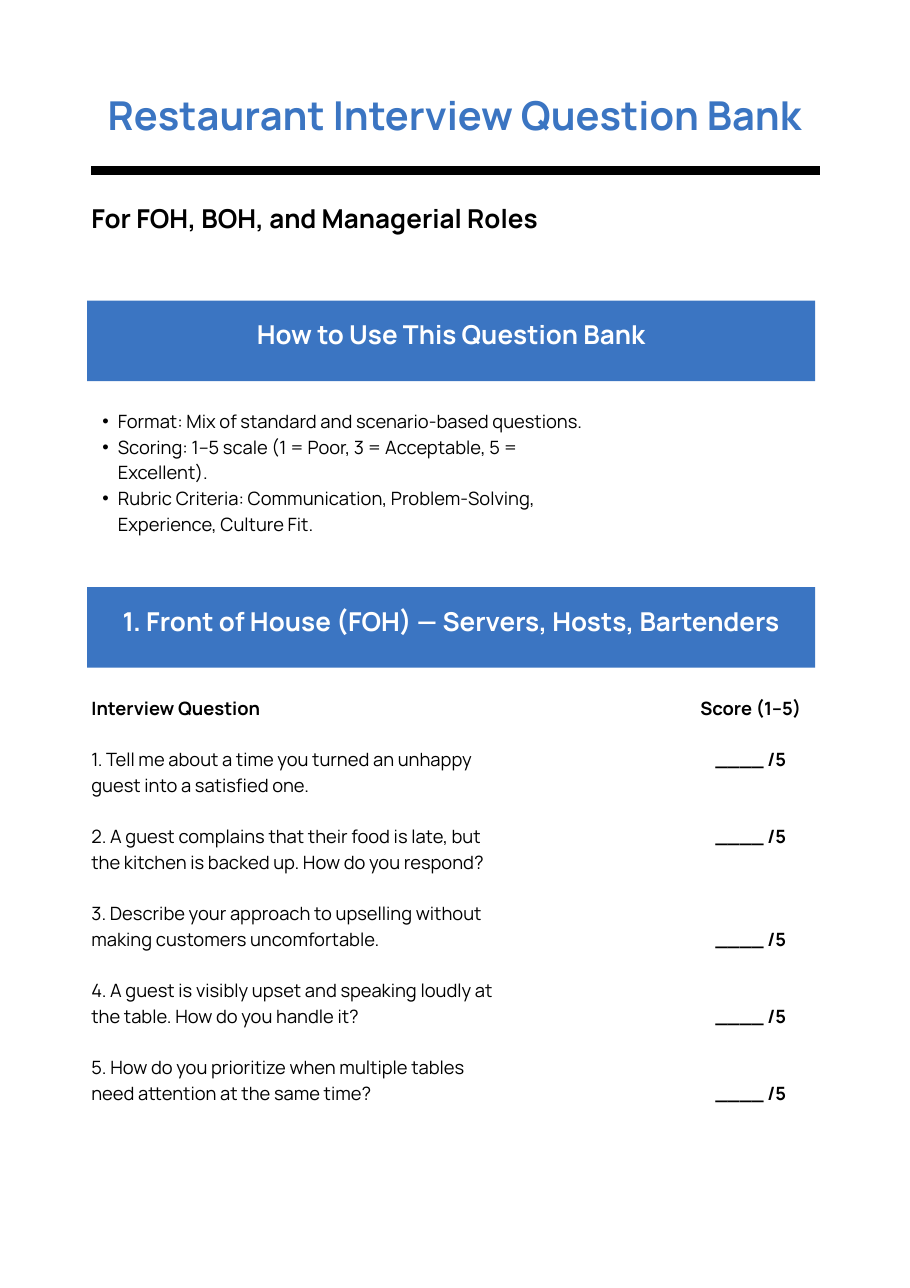
"""Build the restaurant interview question bank page."""
from lxml import etree
from pptx import Presentation
from pptx.dml.color import RGBColor
from pptx.enum.shapes import MSO_CONNECTOR, MSO_SHAPE
from pptx.enum.text import MSO_ANCHOR, MSO_AUTO_SIZE, PP_ALIGN
from pptx.oxml.ns import qn
from pptx.util import Emu, Pt

PX = 9144
FONT = "Manrope"
BLUE, BLACK, WHITE = "3B75C2", "000000", "FFFFFF"
LEADING = 1.4
LINE = 16.8


def color(value):
    return RGBColor.from_string(value)


def write(shape, lines, size, ink, bold=False, align=PP_ALIGN.LEFT, margins=(0, 0, 0, 0)):
    frame = shape.text_frame
    frame.word_wrap = True
    frame.margin_left, frame.margin_top, frame.margin_right, frame.margin_bottom = [
        Emu(margin * PX) for margin in margins
    ]
    frame.text = "\n".join(lines)
    for para in frame.paragraphs:
        para.alignment = align
        para.line_spacing = Pt(size * LEADING)
        for span in para.runs:
            span.font.name = FONT
            span.font.size = Pt(size)
            span.font.bold = bold
            span.font.color.rgb = color(ink)
    return frame


deck = Presentation()
deck.slide_width, deck.slide_height = Emu(826 * PX), Emu(1169 * PX)
page = deck.slides.add_slide(deck.slide_layouts[6])

rule = page.shapes.add_connector(
    MSO_CONNECTOR.STRAIGHT, Emu(83 * PX), Emu(155 * PX), Emu(744 * PX), Emu(155 * PX)
)
rule.line.color.rgb = color(BLACK)
rule.line.width = Pt(6)
etree.SubElement(rule.element.spPr, qn("a:effectLst"))

for top, heading in [
    (273, "How to Use This Question Bank"),
    (533, "1. Front of House (FOH) — Servers, Hosts, Bartenders"),
]:
    band = page.shapes.add_shape(
        MSO_SHAPE.RECTANGLE, Emu(79 * PX), Emu(top * PX), Emu(661 * PX), Emu(73 * PX)
    )
    band.shadow.inherit = False
    band.fill.solid()
    band.fill.fore_color.rgb = color(BLUE)
    band.line.fill.background()
    frame = write(band, [heading], 17, WHITE, True, PP_ALIGN.CENTER, (6, 6, 6, 23))
    frame.vertical_anchor = MSO_ANCHOR.MIDDLE

instructions = [
    "Format: Mix of standard and scenario-based questions.",
    "Scoring: 1–5 scale (1 = Poor, 3 = Acceptable, 5 = Excellent).",
    "Rubric Criteria: Communication, Problem-Solving, Experience, Culture Fit.",
]
questions = [
    "Interview Question",
    "1. Tell me about a time you turned an unhappy guest into a satisfied one.",
    "2. A guest complains that their food is late, but the kitchen is backed up. How do you respond?",
    "3. Describe your approach to upselling without making customers uncomfortable.",
    "4. A guest is visibly upset and speaking loudly at the table. How do you handle it?",
    "5. How do you prioritize when multiple tables need attention at the same time?",
]
scores = ["Score (1–5)"] + ["____ /5"] * 5

frames = []
for left, top, width, height, lines, size, ink, bold, align in [
    (79, 75, 668, 50, ["Restaurant Interview Question Bank"], 26, BLUE, True, PP_ALIGN.CENTER),
    (83, 179, 464, 34, ["For FOH, BOH, and Managerial Roles"], 17, BLACK, True, PP_ALIGN.LEFT),
    (79, 369, 464, 137, instructions, 12, BLACK, False, PP_ALIGN.LEFT),
    (83, 629, 377, 412, questions, 12, BLACK, False, PP_ALIGN.LEFT),
    (623, 629, 117, 405, scores, 12, BLACK, True, PP_ALIGN.CENTER),
]:
    box = page.shapes.add_textbox(Emu(left * PX), Emu(top * PX), Emu(width * PX), Emu(height * PX))
    frame = write(box, lines, size, ink, bold, align)
    frame.auto_size = MSO_AUTO_SIZE.SHAPE_TO_FIT_TEXT
    frames.append(frame)
instruction_frame, question_frame, score_frame = frames[2:]

for para in instruction_frame.paragraphs:
    para.level = 1
    properties = para._p.get_or_add_pPr()
    properties.set("marL", str(28 * PX))
    properties.set("indent", str(-14 * PX))
    etree.SubElement(properties, qn("a:buFont"), typeface="Arial")
    etree.SubElement(properties, qn("a:buChar"), char="•")

question_frame.paragraphs[0].runs[0].font.bold = True
for frame, blank_lines in [(question_frame, [1, 1, 1, 1, 1]), (score_frame, [1, 2, 3, 2, 2])]:
    for para, count in zip(frame.paragraphs[1:], blank_lines):
        para.space_before = Pt(count * LINE)

deck.save("out.pptx")
